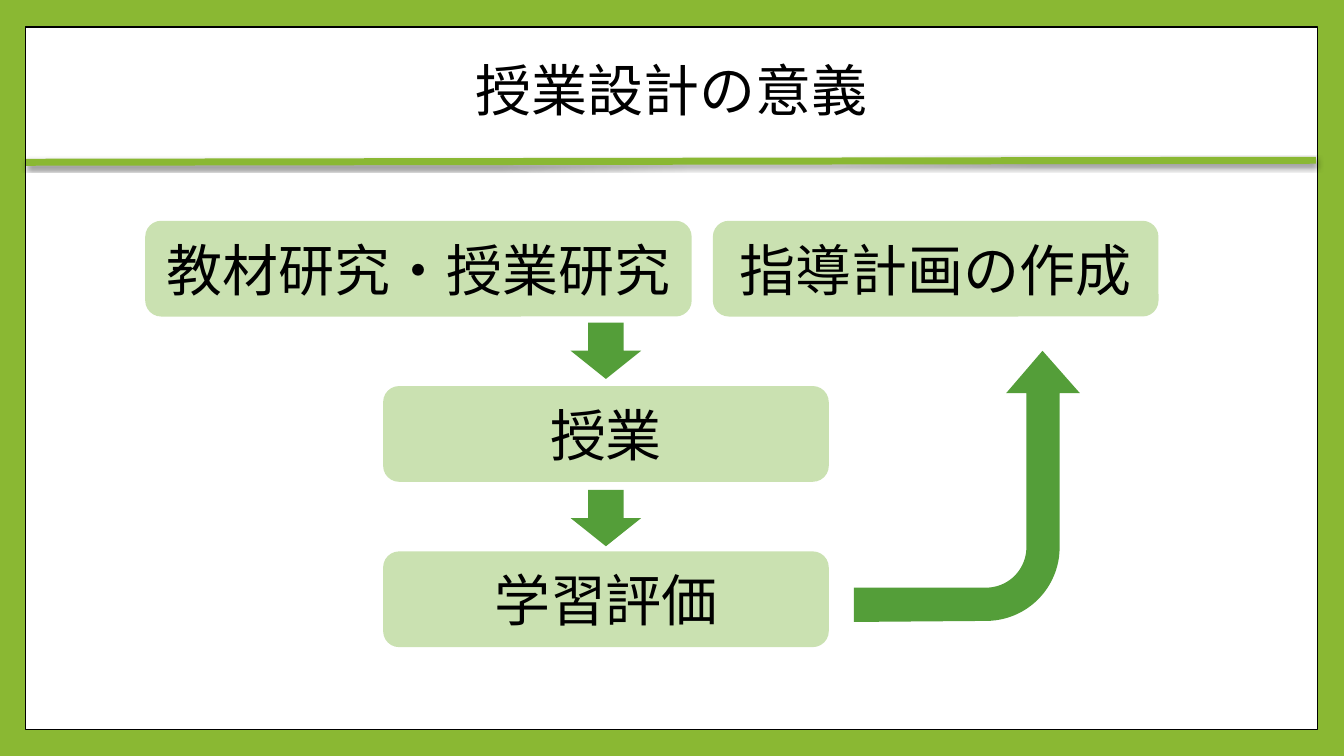
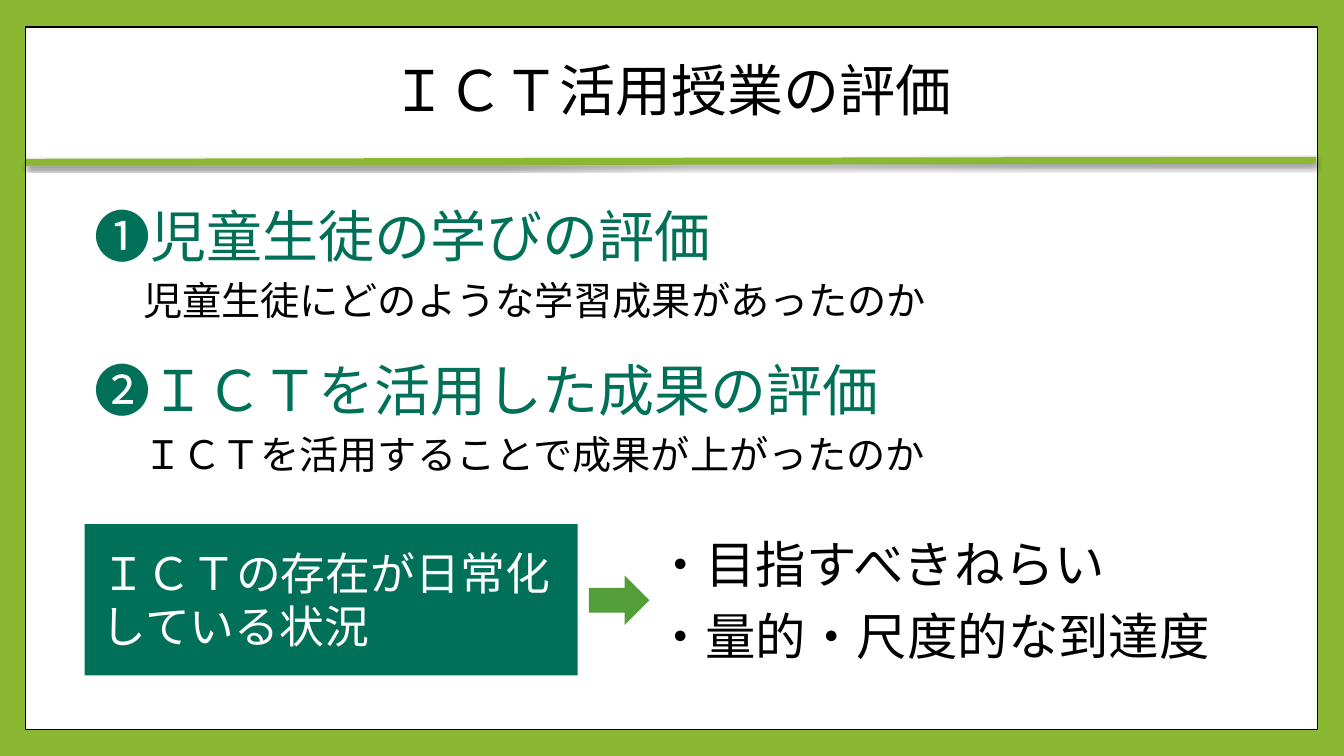
import math
import pptx
import pptx.util
import pptx.dml.color
import pptx.enum.shapes
import pptx.enum.text
import pptx.oxml
import pptx.oxml.ns
import lxml.etree

Inches = pptx.util.Inches
Pt = pptx.util.Pt
RGBColor = pptx.dml.color.RGBColor
Kind = pptx.enum.shapes.MSO_SHAPE
Align = pptx.enum.text.PP_ALIGN
Anchor = pptx.enum.text.MSO_ANCHOR
Fit = pptx.enum.text.MSO_AUTO_SIZE
qn = pptx.oxml.ns.qn

LIME = RGBColor(0x8A, 0xB8, 0x33)
PALE = RGBColor(0xCA, 0xE1, 0xB1)
GREEN = RGBColor(0x54, 0x9E, 0x39)
TEAL = RGBColor(0x01, 0x70, 0x58)
BLACK = RGBColor(0, 0, 0)
WHITE = RGBColor(255, 255, 255)
FONT = "Noto Sans CJK JP"

FLOW = "授業設計の意義"
TOP, STEP, HIGH = 2.19, 1.64, 0.95
STAGES = [
    ("指導計画の作成", 7.07, 0, 4.42),
    ("授業", 3.8, 1, 4.42),
    ("教材研究・授業研究", 1.44, 0, 5.42),
    ("学習評価", 3.8, 2, 4.42),
]

REVIEW = "ＩＣＴ活用授業の評価"
POINTS = [
    ("❶児童生徒の学びの評価", 7.16, "児童生徒にどのような学習成果があったのか"),
    ("❷ＩＣＴを活用した成果の評価", 8.22, "ＩＣＴを活用することで成果が上がったのか"),
]
STATE = "ＩＣＴの存在が日常化している状況"
GOALS = [("・目指すべきねらい", 6.33), ("・量的・尺度的な到達度", 5.9)]

SHADE = (
    '<a:outerShdw xmlns:a="http://schemas.openxmlformats.org/drawingml/2006/main" '
    'blurRad="38100" dist="25400" dir="5400000" algn="ctr" rotWithShape="0">'
    '<a:srgbClr val="000000"><a:alpha val="45000"/></a:srgbClr></a:outerShdw>'
)


def write(shape, text, size=40, color=BLACK, align=Align.LEFT,
          anchor=Anchor.TOP, space=None, grow=False):
    frame = shape.text_frame
    frame.word_wrap = True
    frame.vertical_anchor = anchor
    if grow:
        frame.auto_size = Fit.SHAPE_TO_FIT_TEXT
    para = frame.paragraphs[0]
    para.alignment = align
    if space:
        para.line_spacing = space
    run = para.add_run()
    run.text = text
    run.font.size = Pt(size)
    run.font.color.rgb = color
    run.font.name = FONT
    east = lxml.etree.SubElement(run.font._element, qn("a:ea"))
    east.set("typeface", FONT)


def label(shapes, text, *place, **style):
    write(shapes.add_textbox(*map(Inches, place)), text, **style)


def paint(shape, fill, line=None):
    shape.shadow.inherit = False
    shape.fill.solid()
    shape.fill.fore_color.rgb = fill
    if line is None:
        shape.line.fill.background()
    else:
        shape.line.color.rgb = line
        shape.line.width = Pt(1)
    return shape


def block(shapes, kind, fill, *place, line=None):
    return paint(shapes.add_shape(kind, *map(Inches, place)), fill, line)


def page(deck, title):
    slide = deck.slides.add_slide(deck.slide_layouts[6])
    slide.background.fill.solid()
    slide.background.fill.fore_color.rgb = LIME
    shapes = slide.shapes
    block(shapes, Kind.RECTANGLE, WHITE, 0.25, 0.27, 12.82, 6.97, line=BLACK)
    rule = shapes.add_connector(pptx.enum.shapes.MSO_CONNECTOR.STRAIGHT,
                                *map(Inches, (0.26, 1.61, 13.05, 1.59)))
    rule.line.color.rgb = LIME
    rule.line.width = Pt(5)
    props = rule._element.spPr
    effect = lxml.etree.SubElement(props, qn("a:effectLst"))
    effect.append(pptx.oxml.parse_xml(SHADE))
    label(shapes, title, 0.26, 0.36, 12.8, 1.14, align=Align.CENTER,
          anchor=Anchor.MIDDLE, space=0.9)
    return shapes


def arc(x, y, radius, start, end, count=24):
    turns = [math.radians(start + (end - start) * i / count) for i in range(count + 1)]
    return [(x + radius * math.cos(t), y + radius * math.sin(t)) for t in turns]


def bend(shapes):
    outer = arc(9.78, 5.43, 0.73, 90, 0)
    inner = arc(9.78, 5.43, 0.4, 0, 90)
    head = [(10.51, 3.9), (10.71, 3.9), (10.34, 3.48), (9.98, 3.9), (10.18, 3.9)]
    dots = [(8.47, 6.17)] + outer + head + inner + [(8.47, 5.83)]
    dots = [(Inches(x), Inches(y)) for x, y in dots]
    form = shapes.build_freeform(*dots[0])
    form.add_line_segments(dots[1:])
    paint(form.convert_to_shape(), GREEN)


def flow(deck):
    shapes = page(deck, FLOW)
    for text, left, row, wide in STAGES:
        box = block(shapes, Kind.ROUNDED_RECTANGLE, PALE,
                    left, TOP + row * STEP, wide, HIGH)
        write(box, text, align=Align.CENTER, anchor=Anchor.MIDDLE)
    for row in range(2):
        block(shapes, Kind.DOWN_ARROW, GREEN, 5.66, 3.2 + row * 1.66, 0.7, 0.56)
    bend(shapes)


def review(deck):
    shapes = page(deck, REVIEW)
    goals = shapes.add_group_shape().shapes
    for row, (text, wide) in enumerate(GOALS):
        label(goals, text, 6.4, 5.24 + row * 0.71, wide, 0.71, size=36, grow=True)
    for row, (head, wide, note) in enumerate(POINTS):
        pair = shapes.add_group_shape().shapes
        top = 1.95 + row * 1.53
        label(pair, head, 0.84, top, wide, 0.77, color=TEAL, grow=True)
        label(pair, note, 1.32, top + 0.74, 8.08, 0.57, size=28, grow=True)
    state = shapes.add_group_shape().shapes
    block(state, Kind.RECTANGLE, TEAL, 0.84, 5.2, 4.89, 1.5)
    label(state, STATE, 0.91, 5.36, 4.75, 1.18, size=32, color=WHITE, grow=True)
    block(shapes, Kind.RIGHT_ARROW, GREEN, 5.84, 5.71, 0.6, 0.49)


def main():
    deck = pptx.Presentation()
    deck.slide_width = Inches(13.33)
    deck.slide_height = Inches(7.5)
    flow(deck)
    review(deck)
    deck.save("out.pptx")


if __name__ == "__main__":
    main()
